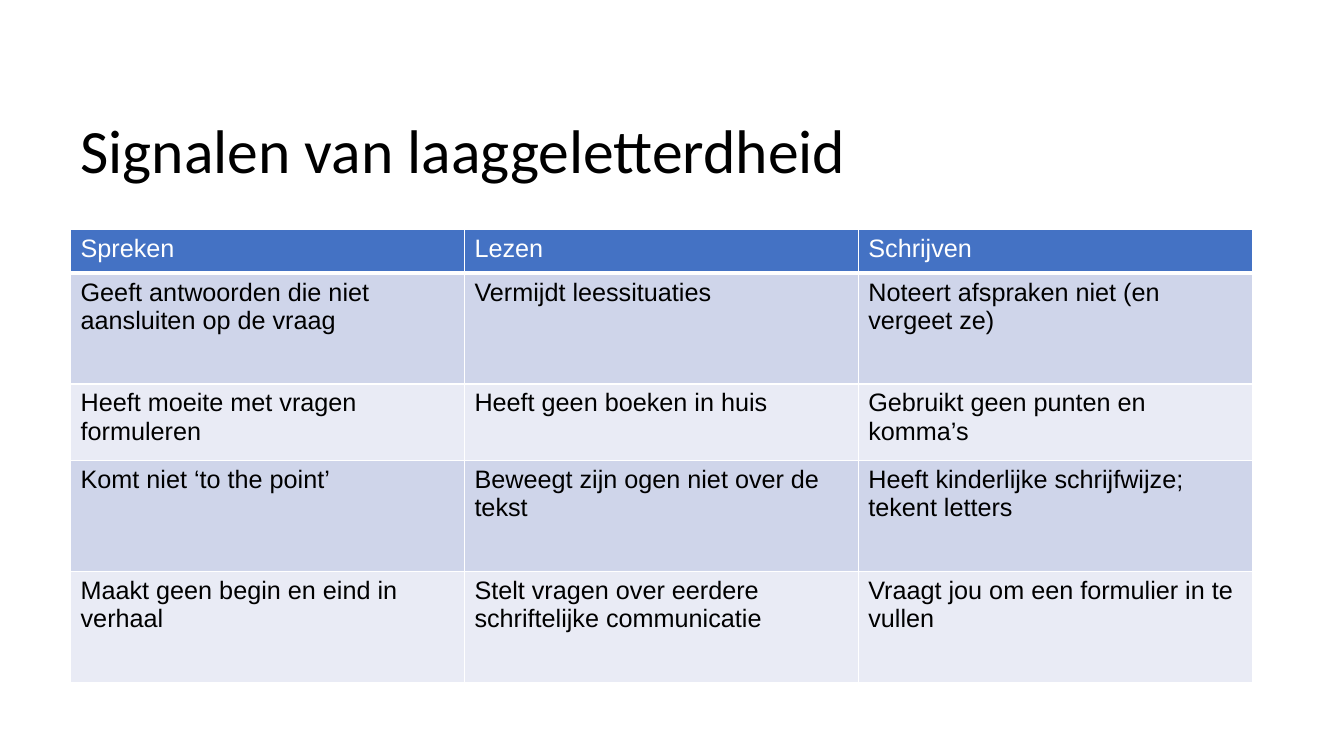
from lxml import etree
from pptx import Presentation
from pptx.dml.color import RGBColor
from pptx.enum import text
from pptx.oxml import ns
from pptx.util import Inches, Pt

COLOURS = {
    "black": "000000",
    "white": "FFFFFF",
    "header": "4472C4",
    "odd": "CFD5EA",
    "even": "E9EBF5",
}
LEFT, WIDTH = 0.7, 11.72
ROW_HEIGHTS = [0.43, 1.1, 0.76, 1.1, 1.1]
SIGNALS = [
    ("Spreken", "Lezen", "Schrijven"),
    ("Geeft antwoorden die niet aansluiten op de vraag",
     "Vermijdt leessituaties",
     "Noteert afspraken niet (en vergeet ze)"),
    ("Heeft moeite met vragen formuleren",
     "Heeft geen boeken in huis",
     "Gebruikt geen punten en komma’s"),
    ("Komt niet ‘to the point’",
     "Beweegt zijn ogen niet over de tekst",
     "Heeft kinderlijke schrijfwijze; tekent letters"),
    ("Maakt geen begin en eind in verhaal",
     "Stelt vragen over eerdere schriftelijke communicatie",
     "Vraagt jou om een formulier in te vullen"),
]


def colour(name):
    return RGBColor.from_string(COLOURS[name])


def style_font(paragraph, family, size, ink):
    font = paragraph.font
    font.name, font.size, font.bold = family, Pt(size), False
    font.color.rgb = colour(ink)


def add_title(slide, wording):
    title = slide.shapes.add_textbox(
        Inches(LEFT), Inches(1.06), Inches(WIDTH), Inches(0.92))
    frame = title.text_frame
    frame.word_wrap = True
    frame.vertical_anchor = text.MSO_ANCHOR.MIDDLE
    heading = frame.paragraphs[0]
    heading.text = wording
    heading.line_spacing = 0.9
    style_font(heading, "Calibri", 44, "black")


def add_borders(cell, bottom_width):
    """Draw white cell edges; must run before the cell fill is set."""
    properties = cell._tc.get_or_add_tcPr()
    for side, width in (("L", 1), ("R", 1), ("T", 1), ("B", bottom_width)):
        edge = etree.SubElement(
            properties, ns.qn(f"a:ln{side}"), w=str(Pt(width)))
        fill = etree.SubElement(edge, ns.qn("a:solidFill"))
        etree.SubElement(fill, ns.qn("a:srgbClr"), val=COLOURS["white"])


def fill_cell(cell, wording, background, ink, bottom_width):
    add_borders(cell, bottom_width)
    cell.fill.solid()
    cell.fill.fore_color.rgb = colour(background)
    cell.text = wording
    style_font(cell.text_frame.paragraphs[0], "Arial", 18, ink)


def add_signal_table(slide):
    columns = len(SIGNALS[0])
    table = slide.shapes.add_table(
        len(SIGNALS), columns, Inches(LEFT), Inches(2.28),
        Inches(WIDTH), Inches(sum(ROW_HEIGHTS))).table
    for column in table.columns:
        column.width = Inches(WIDTH / columns)
    for index, (signals, height) in enumerate(zip(SIGNALS, ROW_HEIGHTS)):
        row = table.rows[index]
        row.height = Inches(height)
        if index == 0:
            look = ("header", "white", 3)
        else:
            look = ("odd" if index % 2 else "even", "black", 1)
        for cell, wording in zip(row.cells, signals):
            fill_cell(cell, wording, *look)


def main():
    deck = Presentation()
    deck.slide_width, deck.slide_height = Inches(13.33), Inches(7.5)
    slide = deck.slides.add_slide(deck.slide_layouts[6])
    add_title(slide, "Signalen van laaggeletterdheid")
    add_signal_table(slide)
    deck.save("out.pptx")


if __name__ == "__main__":
    main()
